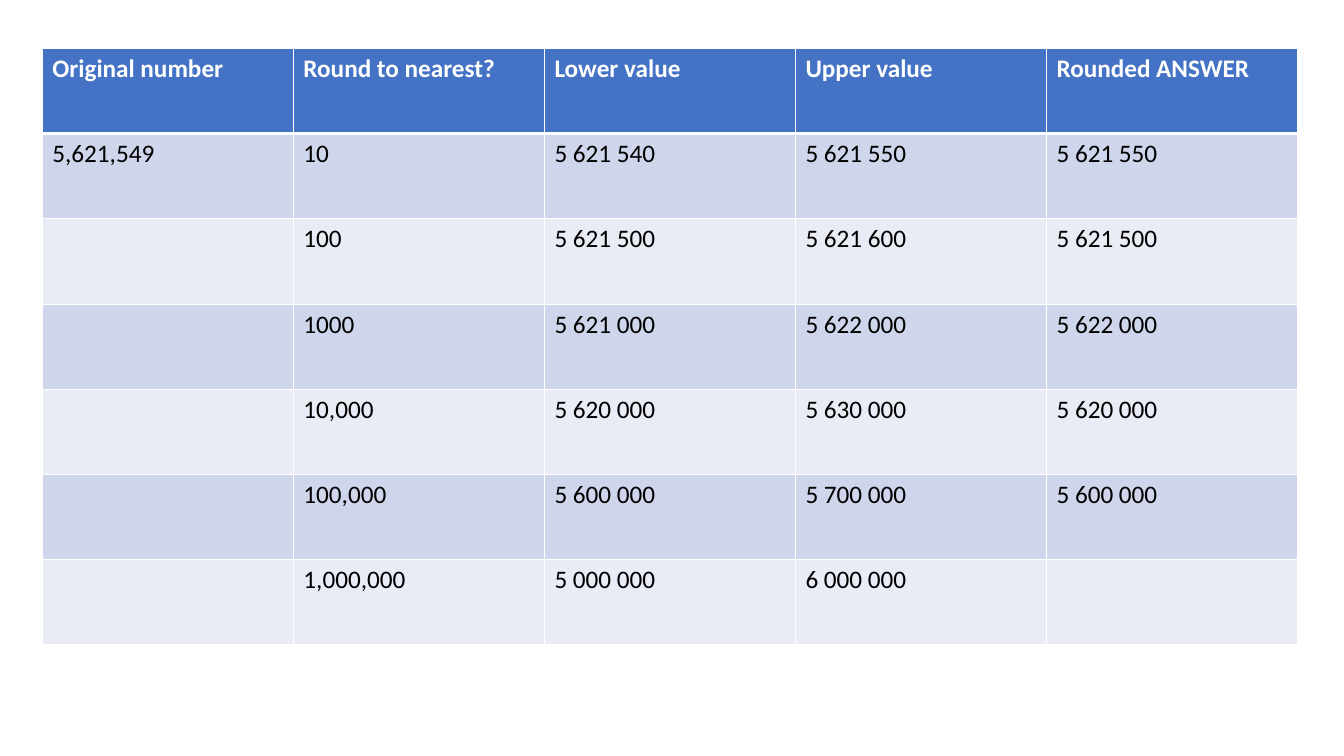
from lxml.etree import SubElement as Sub
from pptx import Presentation
from pptx.dml.color import RGBColor as RGB
from pptx.oxml.ns import qn
from pptx.util import Inches, Pt

WHITE = RGB(0xFF, 0xFF, 0xFF)
BLACK = RGB(0x00, 0x00, 0x00)
BLUE = RGB(0x44, 0x72, 0xC4)
BANDS = [RGB(0xE9, 0xEB, 0xF5), RGB(0xCF, 0xD5, 0xEA)]

ROWS = [
    ["Original number", "Round to nearest?", "Lower value", "Upper value", "Rounded ANSWER"],
    ["5,621,549", "10", "5 621 540", "5 621 550", "5 621 550"],
    ["", "100", "5 621 500", "5 621 600", "5 621 500"],
    ["", "1000", "5 621 000", "5 622 000", "5 622 000"],
    ["", "10,000", "5 620 000", "5 630 000", "5 620 000"],
    ["", "100,000", "5 600 000", "5 700 000", "5 600 000"],
    ["", "1,000,000", "5 000 000", "6 000 000", ""],
]


def add_edge(cell, side, width):
    props = cell._tc.get_or_add_tcPr()
    line = Sub(props, qn(f"a:ln{side}"), w=str(Pt(width)))
    fill = Sub(line, qn("a:solidFill"))
    Sub(fill, qn("a:srgbClr"), val=str(WHITE))


def style_cell(cell, text, row):
    head = row == 0
    widths = {"L": 1, "R": 1, "T": 3 if row == 1 else 1, "B": 3 if head else 1}
    for side, width in widths.items():
        add_edge(cell, side, width)
    cell.fill.solid()
    cell.fill.fore_color.rgb = BLUE if head else BANDS[row % 2]
    cell.text_frame.text = text
    for run in cell.text_frame.paragraphs[0].runs:
        font = run.font
        font.name = "Calibri"
        font.size = Pt(18)
        font.bold = head
        font.color.rgb = WHITE if head else BLACK


def add_grid(slide, left, top, width, height):
    frame = slide.shapes.add_table(len(ROWS), len(ROWS[0]), left, top, width, height)
    table = frame.table
    for row, texts in enumerate(ROWS):
        for col, text in enumerate(texts):
            style_cell(table.cell(row, col), text, row)


def main():
    deck = Presentation()
    deck.slide_width = Inches(13.33)
    deck.slide_height = Inches(7.5)
    slide = deck.slides.add_slide(deck.slide_layouts[6])
    add_grid(slide, Inches(0.42), Inches(0.48), Inches(12.45), Inches(5.92))
    deck.save("out.pptx")


if __name__ == "__main__":
    main()
